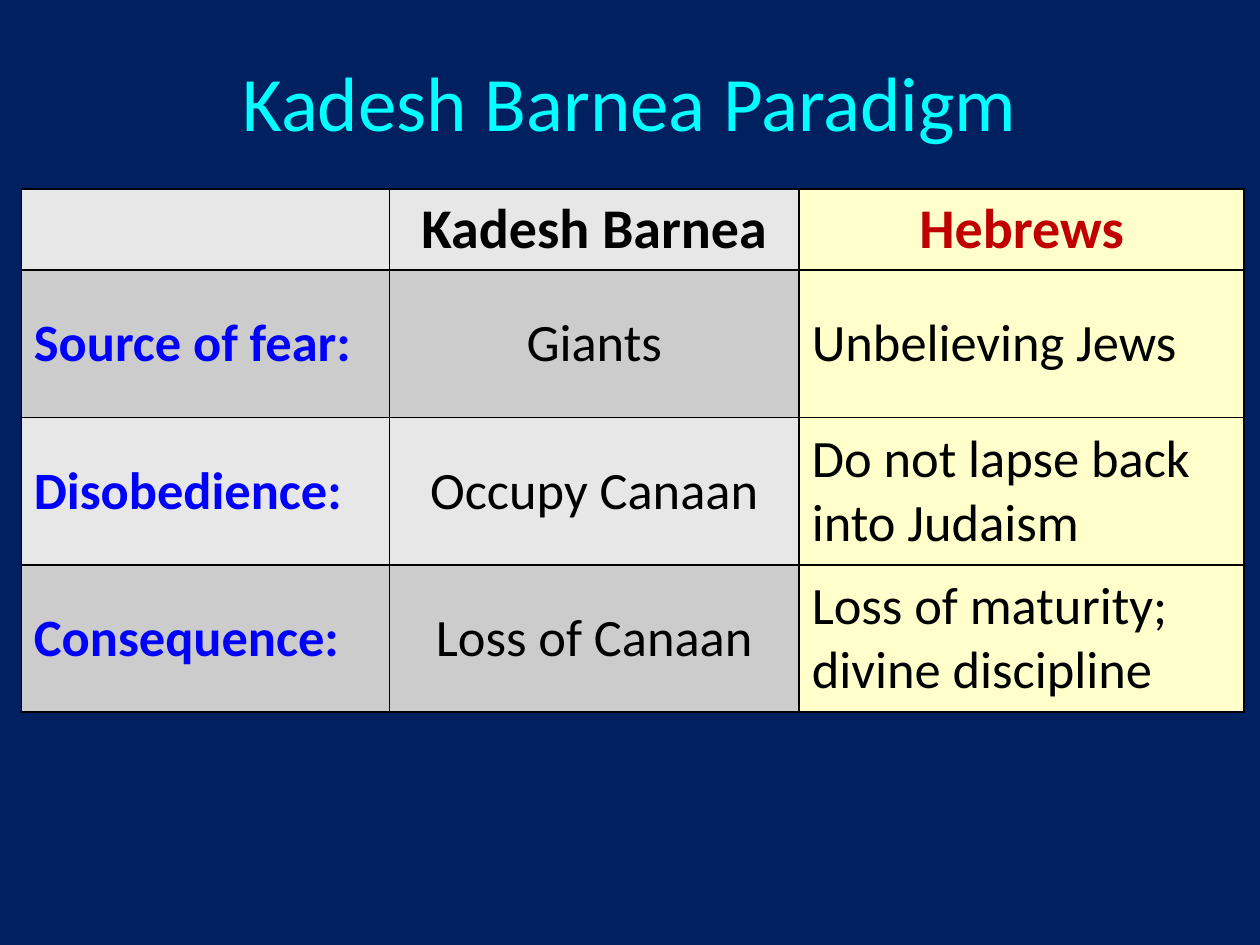
"""Build the Kadesh Barnea Paradigm slide with its comparison table."""
from dataclasses import dataclass

from lxml import etree
from pptx import Presentation
from pptx.dml.color import RGBColor
from pptx.enum import text
from pptx.oxml import ns
from pptx.util import Cm, Pt

LEFT, CENTER = text.PP_ALIGN.LEFT, text.PP_ALIGN.CENTER
COLUMN_WIDTHS = (7.42, 8.26, 8.97)
ROW_HEIGHTS = (1.6, 2.97, 2.97, 2.97)
BANDS = ("E7E7E7", "CCCCCC")
HIGHLIGHT = "FFFFCC"


@dataclass(frozen=True)
class Style:
    size: int
    color: str = "000000"
    bold: bool = False
    align: text.PP_ALIGN = CENTER


TITLE = Style(44, "00FFFF")
HEADERS = (Style(32, bold=True), Style(32, bold=True), Style(32, "C00000", True))
BODY = (Style(30, "0000FF", True, LEFT), Style(30), Style(30, align=LEFT))
ROWS = (
    ("", "Kadesh Barnea", "Hebrews"),
    ("Source of fear:", "Giants", "Unbelieving Jews"),
    ("Disobedience:", "Occupy Canaan", "Do not lapse back into Judaism"),
    ("Consequence:", "Loss of Canaan", "Loss of maturity; divine discipline"),
)


def rgb(value: str) -> RGBColor:
    return RGBColor.from_string(value)


def write(frame, words: str, style: Style) -> None:
    paragraph = frame.paragraphs[0]
    paragraph.alignment = style.align
    run = paragraph.add_run()
    run.text = words
    font_format = {"name": "Calibri", "size": Pt(style.size), "bold": style.bold}
    for name, value in font_format.items():
        setattr(run.font, name, value)
    run.font.color.rgb = rgb(style.color)


def add_borders(cell, color: str = "000000", width: int = 1) -> None:
    properties = cell._tc.get_or_add_tcPr()
    for side in ("lnL", "lnR", "lnT", "lnB"):
        line = etree.SubElement(properties, ns.qn(f"a:{side}"), w=str(Pt(width)))
        fill = etree.SubElement(line, ns.qn("a:solidFill"))
        etree.SubElement(fill, ns.qn("a:srgbClr"), val=color)


def format_cell(cell, words: str, style: Style, fill: str) -> None:
    add_borders(cell)
    cell.fill.solid()
    cell.fill.fore_color.rgb = rgb(fill)
    cell.vertical_anchor = text.MSO_ANCHOR.MIDDLE
    if words:
        write(cell.text_frame, words, style)


def add_title(slide, words: str) -> None:
    title = slide.shapes.title
    position = {"left": 1.9, "top": 0.43, "width": 21.59, "height": 3.18}
    for name, value in position.items():
        setattr(title, name, Cm(value))
    title.text_frame.vertical_anchor = text.MSO_ANCHOR.MIDDLE
    write(title.text_frame, words, TITLE)


def add_comparison(slide) -> None:
    table = slide.shapes.add_table(
        len(ROWS), len(COLUMN_WIDTHS), Cm(0.43), Cm(3.81),
        Cm(sum(COLUMN_WIDTHS)), Cm(sum(ROW_HEIGHTS)),
    ).table
    for column, width in zip(table.columns, COLUMN_WIDTHS):
        column.width = Cm(width)
    for row_index, (row, height) in enumerate(zip(table.rows, ROW_HEIGHTS)):
        row.height = Cm(height)
        styles = BODY if row_index else HEADERS
        band = BANDS[row_index % 2]
        fills = (band, band, HIGHLIGHT)
        for cell, words, style, fill in zip(row.cells, ROWS[row_index], styles, fills):
            format_cell(cell, words, style, fill)


def main() -> None:
    presentation = Presentation()
    presentation.slide_width, presentation.slide_height = Cm(25.4), Cm(19.05)
    slide = presentation.slides.add_slide(presentation.slide_layouts[5])
    slide.background.fill.solid()
    slide.background.fill.fore_color.rgb = rgb("002060")
    add_title(slide, "Kadesh Barnea Paradigm")
    add_comparison(slide)
    presentation.save("out.pptx")


if __name__ == "__main__":
    main()
